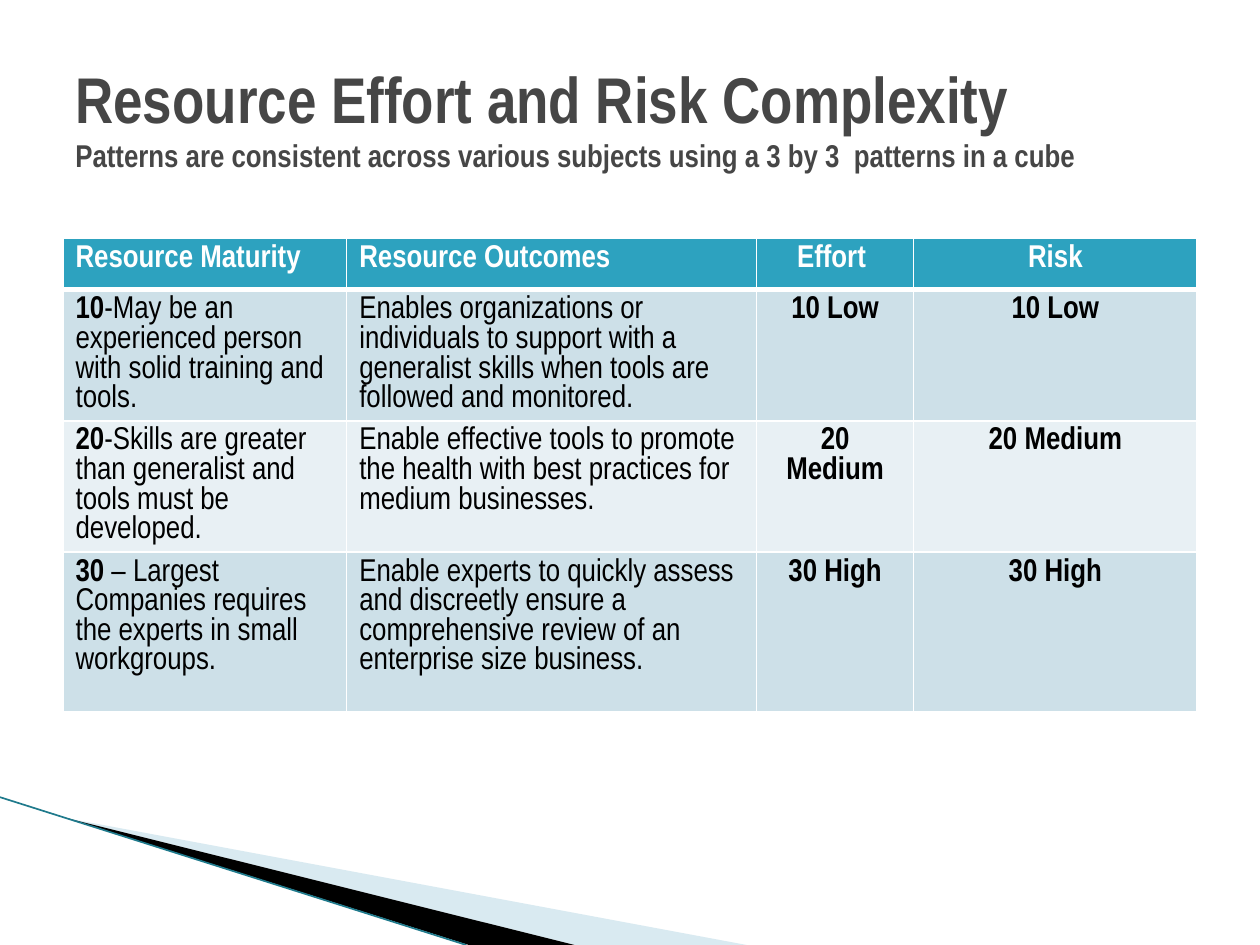
from pptx import Presentation
from pptx.dml.color import RGBColor
from pptx.enum.shapes import MSO_CONNECTOR as Conn
from pptx.enum.text import MSO_ANCHOR as Anchor, PP_ALIGN as Align
from pptx.oxml.ns import qn
from pptx.util import Cm, Pt
from lxml.etree import SubElement as Sub

FONT = "Arial Narrow"
WHITE = RGBColor(0xFF, 0xFF, 0xFF)
BLACK = RGBColor(0, 0, 0)
GREY = RGBColor(0x46, 0x46, 0x46)
TEAL = RGBColor(0x2D, 0xA2, 0xBF)
DEEP = RGBColor(0x1F, 0x7A, 0x8C)
PALE = RGBColor(0xA0, 0xCB, 0xDC)
BANDS = RGBColor(0xCD, 0xE0, 0xE8), RGBColor(0xE8, 0xF0, 0xF4)

COLS = 5.72, 8.26, 3.17, 5.71
ROWS = 1.04, 2.64, 2.64, 3.23
HEADS = "Resource Maturity", "Resource Outcomes", "Effort ", "Risk"
BODY = [
    ("10", "-May be an experienced person with solid training and tools.",
     "Enables organizations or individuals to support with a generalist "
     "skills when tools are followed and monitored.", "10 Low"),
    ("20", "-Skills are greater than generalist and tools must be developed.",
     "Enable effective tools to promote the health with best practices for "
     "medium businesses.", "20 Medium"),
    ("30", " – Largest Companies requires the experts in small workgroups.",
     "Enable experts to quickly assess and discreetly ensure a comprehensive "
     "review of an enterprise size business.", "30 High"),
]


def write(para, text, size=18, color=BLACK, bold=False, align=Align.LEFT):
    """Add one run of text to a paragraph."""
    para.alignment = align
    run = para.add_run()
    run.text = text
    font = run.font
    font.name, font.size, font.bold = FONT, Pt(size), bold
    font.color.rgb = color


def edge(cell, side, width):
    """Draw one white cell border."""
    line = Sub(cell._tc.get_or_add_tcPr(), qn(f"a:ln{side}"), w=str(Pt(width)))
    Sub(Sub(line, qn("a:solidFill")), qn("a:srgbClr"), val=str(WHITE))


def wedge(slide, points, color, alpha=None):
    """Draw a filled outline through points in cm."""
    spots = [(Cm(x), Cm(y)) for x, y in points]
    build = slide.shapes.build_freeform(*spots[0])
    build.add_line_segments(spots[1:], close=True)
    shape = build.convert_to_shape()
    shape.shadow.inherit = False
    shape.line.fill.background()
    shape.fill.solid()
    shape.fill.fore_color.rgb = color
    if alpha:
        tint = shape.fill._xPr.find(qn("a:solidFill"))[0]
        Sub(tint, qn("a:alpha"), val=str(alpha * 1000))


def add_decor(slide, left, top, width, height):
    """Place the corner wedges and the thin line along them."""
    base = top + height
    tip = left + 1.37, top + 0.43
    wedge(slide, [tip, (left + width, base), (left + 11.58, base)], PALE, 40)
    wedge(slide, [tip, (left + 11.58, base), (left + 9.45, base)], BLACK)
    line = slide.shapes.add_connector(
        Conn.STRAIGHT, Cm(left), Cm(top), Cm(left + 9.4), Cm(base))
    line.line.color.rgb = DEEP
    line.line.width = Pt(0.95)
    Sub(line._element.spPr, qn("a:effectLst"))


def add_title(slide, left, top, width, height):
    """Place the heading with its smaller second line."""
    box = slide.shapes.add_textbox(Cm(left), Cm(top), Cm(width), Cm(height))
    frame = box.text_frame
    frame.word_wrap = True
    frame.vertical_anchor = Anchor.MIDDLE
    para = frame.paragraphs[0]
    write(para, "Resource Effort and Risk Complexity", 36.9, GREY, True)
    para.add_line_break()
    write(para, "Patterns are consistent across various subjects using "
          "a 3 by 3  patterns in a cube", 18, GREY, True)


def add_grid(slide, left, top, width, height):
    """Place the table of maturity, outcomes, effort and risk."""
    table = slide.shapes.add_table(len(ROWS), len(COLS), Cm(left), Cm(top),
                                   Cm(width), Cm(height)).table
    table.horz_banding = False
    for col, size in zip(table.columns, COLS):
        col.width = Cm(size)
    for row, size in zip(table.rows, ROWS):
        row.height = Cm(size)

    # Borders and fills
    for r, row in enumerate(table.rows):
        for cell in row.cells:
            for side in "LRTB":
                thick = (r, side) in ((0, "B"), (1, "T"))
                edge(cell, side, 3 if thick else 1)
            cell.fill.solid()
            cell.fill.fore_color.rgb = BANDS[(r - 1) % 2] if r else TEAL

    # Wording
    def para(r, c):
        return table.cell(r, c).text_frame.paragraphs[0]

    for c, head in enumerate(HEADS):
        write(para(0, c), head, color=WHITE, bold=True,
              align=Align.CENTER if c > 1 else Align.LEFT)
    for r, (mark, need, gain, level) in enumerate(BODY, 1):
        write(para(r, 0), mark, bold=True)
        write(para(r, 0), need)
        write(para(r, 1), gain)
        for c in (2, 3):
            write(para(r, c), level, bold=True, align=Align.CENTER)


def main():
    deck = Presentation()
    deck.slide_width, deck.slide_height = Cm(25.4), Cm(19.05)
    slide = deck.slides.add_slide(deck.slide_layouts[6])
    add_decor(slide, 0, 16.07, 15.05, 2.98)
    add_grid(slide, 1.27, 4.8, sum(COLS), sum(ROWS))
    add_title(slide, 1.27, 0.76, 22.86, 3.18)
    deck.save("out.pptx")


if __name__ == "__main__":
    main()
